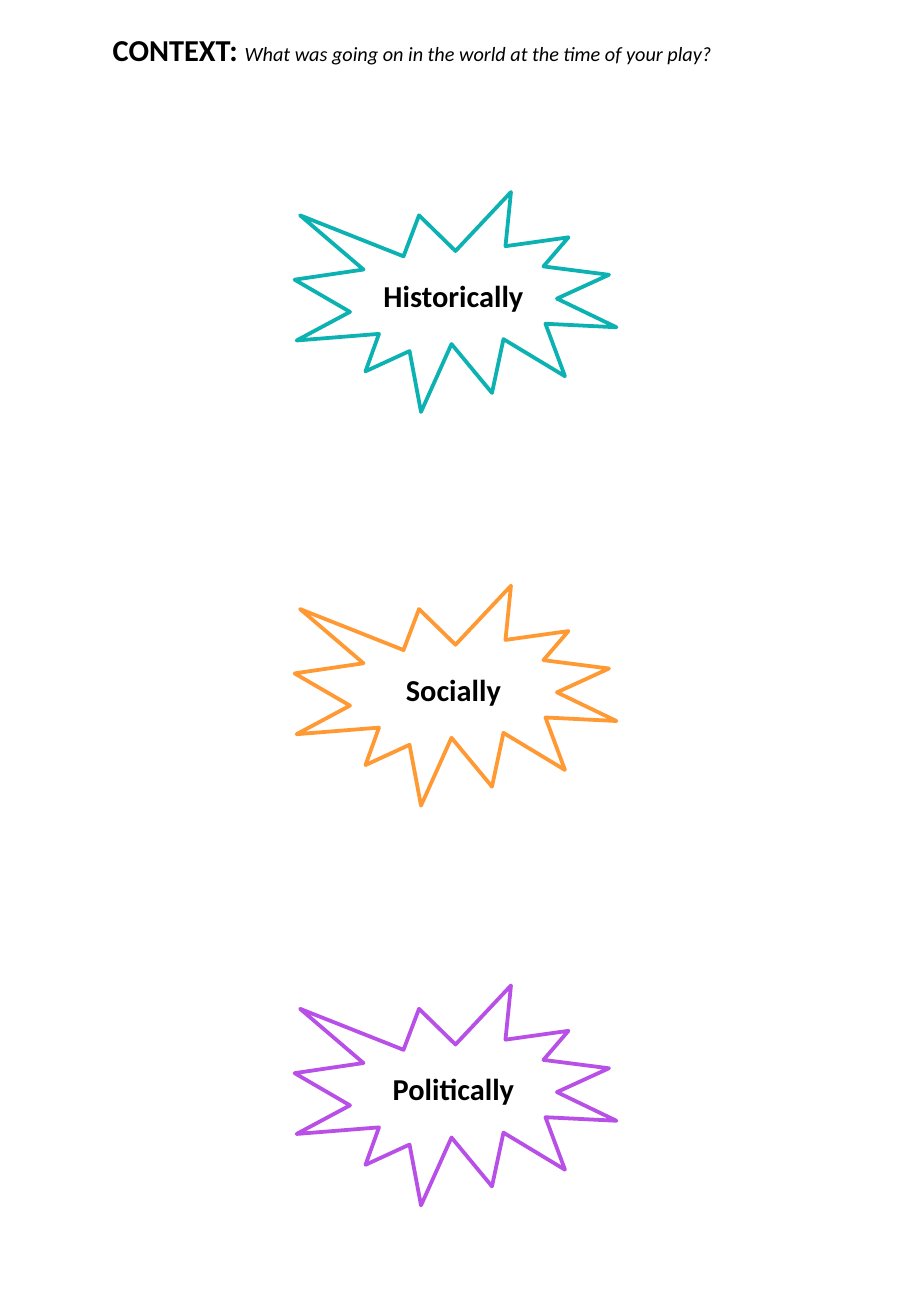
from dataclasses import dataclass

from pptx import Presentation
from pptx.dml.color import RGBColor
from pptx.enum.shapes import MSO_SHAPE
from pptx.enum.text import MSO_ANCHOR, PP_ALIGN
from pptx.util import Inches, Pt

BURST = MSO_SHAPE.EXPLOSION1
MIDDLE = MSO_ANCHOR.MIDDLE
CENTER = PP_ALIGN.CENTER


@dataclass(frozen=True)
class Theme:
    font: str = "Calibri"
    text: str = "000000"
    paper: str = "FFFFFF"
    teal: str = "0CB2B2"
    orange: str = "FF9933"
    purple: str = "B84FE7"
    large: int = 18
    small: int = 12
    outline: float = 2.25


THEME = Theme()

PAGE_SIZE = (7.5, 10.83)
HEADING = "CONTEXT: "
QUESTION = "What was going on in the world at the time of your play?"
HEADING_BOX = (0.83, 0.21, 5.83, 0.71)

# label, outline colour, top
TOPICS = [
    ("Historically", THEME.teal, 1.58),
    ("Socially", THEME.orange, 4.82),
    ("Politically", THEME.purple, 8.11),
]
BURST_WIDTH, BURST_HEIGHT = 2.65, 1.81
BURST_LEFT = (PAGE_SIZE[0] - BURST_WIDTH) / 2


def add_span(para, text, size, bold=False, italic=False):
    span = para.add_run()
    span.text = text
    font = span.font
    font.name = THEME.font
    font.size = Pt(size)
    font.bold = bold
    font.italic = italic
    font.color.rgb = RGBColor.from_string(THEME.text)


def add_heading(page):
    box = page.shapes.add_textbox(*map(Inches, HEADING_BOX))
    box.text_frame.word_wrap = True
    para = box.text_frame.paragraphs[0]
    add_span(para, HEADING, THEME.large, bold=True)
    add_span(para, QUESTION, THEME.small, italic=True)


def add_topic(page, label, colour, top):
    place = (BURST_LEFT, top, BURST_WIDTH, BURST_HEIGHT)
    burst = page.shapes.add_shape(BURST, *map(Inches, place))
    burst.shadow.inherit = False
    burst.fill.solid()
    burst.fill.fore_color.rgb = RGBColor.from_string(THEME.paper)
    burst.line.color.rgb = RGBColor.from_string(colour)
    burst.line.width = Pt(THEME.outline)
    frame = burst.text_frame
    frame.word_wrap = True
    frame.vertical_anchor = MIDDLE
    para = frame.paragraphs[0]
    para.alignment = CENTER
    add_span(para, label, THEME.large, bold=True)


def main():
    deck = Presentation()
    deck.slide_width, deck.slide_height = map(Inches, PAGE_SIZE)
    page = deck.slides.add_slide(deck.slide_layouts[6])
    for topic in TOPICS:
        add_topic(page, *topic)
    add_heading(page)
    deck.save("out.pptx")


if __name__ == "__main__":
    main()
